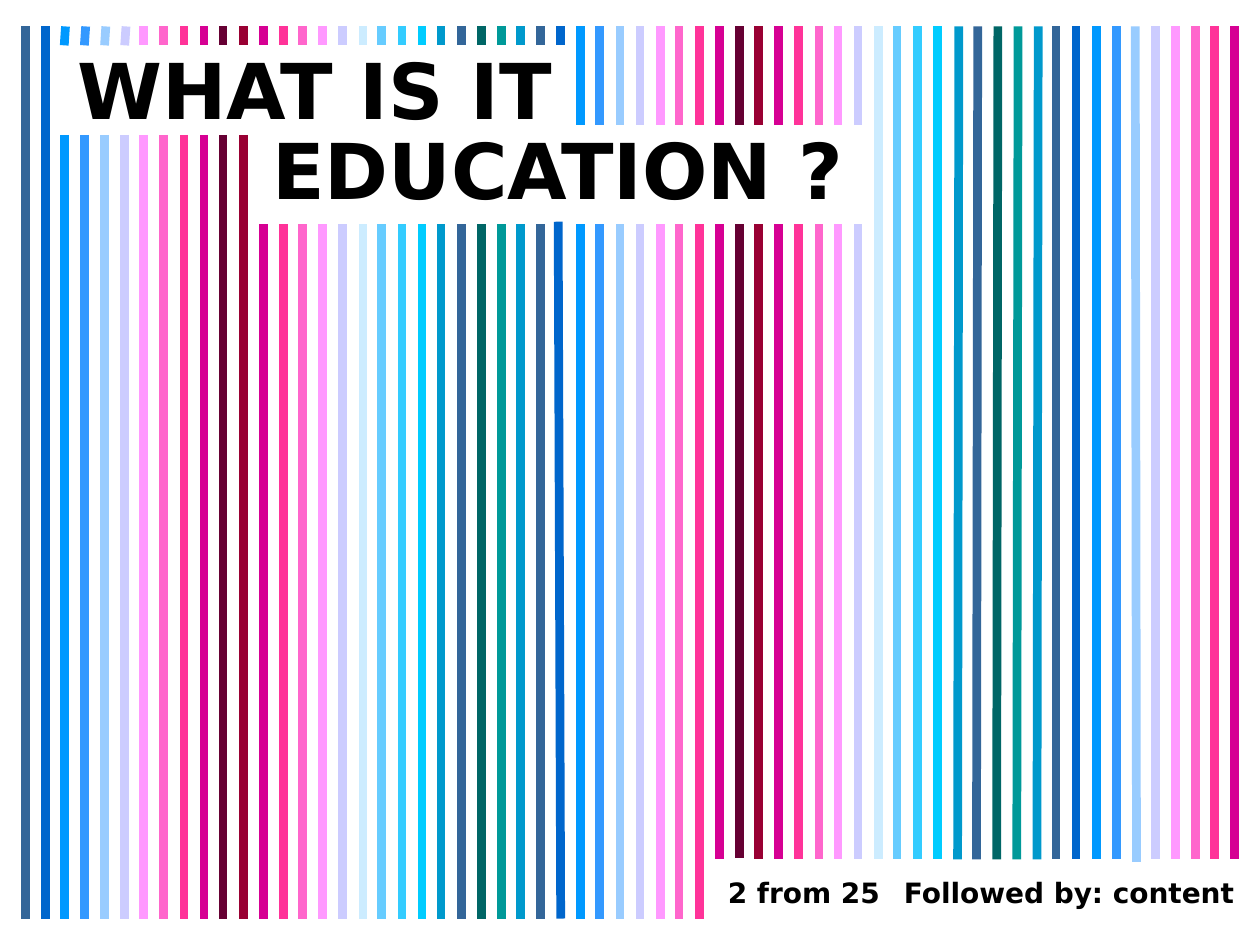
from lxml import etree
from pptx import Presentation
from pptx import util as u
from pptx.dml.color import RGBColor
from pptx.enum import shapes, text
from pptx.oxml.ns import qn

PX = 9144  # EMU per px, 100 px to the inch
COLOURS = {
    "steel": "336699", "royal": "0066CC", "azure": "0099FF", "sky": "3399FF",
    "pale": "99CCFF", "lilac": "CCCCFF", "pink": "FF99FF", "rose": "FF66CC",
    "hot": "FF3399", "magenta": "D60093", "plum": "660033", "wine": "990033",
    "ice": "CCECFF", "light": "66CCFF", "bright": "33CCFF", "cyan": "00CCFF",
    "ocean": "0099CC", "pine": "006666", "teal": "009999",
    "ink": "000000", "outline": "054697",
}
# The stripes run through this sequence again and again
CYCLE = ("steel royal azure sky pale lilac pink rose hot magenta plum wine magenta "
         "hot rose pink lilac ice light bright cyan ocean steel pine teal ocean").split()
STRIPES = 62
LEFT, RIGHT, TOP, BOTTOM = 20, 980, 21, 729

prs = Presentation()
prs.slide_width, prs.slide_height = 1000 * PX, 750 * PX
slide = prs.slides.add_slide(prs.slide_layouts[5])


def add_stripe(i, top, bottom, top_shift=0, bottom_shift=0):
    x = round(LEFT + i * (RIGHT - LEFT) / (STRIPES - 1))
    stripe = slide.shapes.add_connector(
        shapes.MSO_CONNECTOR.STRAIGHT,
        (x + top_shift) * PX, top * PX, (x + bottom_shift) * PX, bottom * PX)
    stripe.line.color.rgb = RGBColor.from_string(COLOURS[CYCLE[i % len(CYCLE)]])
    stripe.line.width = u.Pt(5)
    etree.SubElement(stripe._element.spPr, qn("a:effectLst"))


def write_label(label, wording, size, left, top, width, height):
    label.left, label.top, label.width, label.height = (
        n * PX for n in (left, top, width, height))
    frame = label.text_frame
    frame.text = wording
    frame.word_wrap = True
    frame.auto_size = text.MSO_AUTO_SIZE.SHAPE_TO_FIT_TEXT
    frame.vertical_anchor = text.MSO_ANCHOR.TOP
    paragraph = frame.paragraphs[0]
    paragraph.alignment = text.PP_ALIGN.CENTER
    run = paragraph.runs[0]
    run.font.size, run.font.bold, run.font.name = u.Pt(size), True, "DejaVu Sans"
    run.font.color.rgb = RGBColor.from_string(COLOURS["ink"])
    # Thin letter outline, which has to come first in the run properties
    outline = etree.Element(qn("a:ln"), w=str(u.Pt(1)))
    fill = etree.SubElement(outline, qn("a:solidFill"))
    etree.SubElement(fill, qn("a:srgbClr"), val=COLOURS["outline"])
    run.font._element.insert(0, outline)


# Long stripes, starting below the title lines and ending above the footer
top_shifts = {27: -2, **dict.fromkeys(range(47, 52), 1)}
for i in range(STRIPES):
    if 2 <= i < 12:
        top = 107
    elif 12 <= i < 43:
        top = 176 if i == 27 else 178
    else:
        top = TOP
    bottom = BOTTOM if i < 35 else {36: 681, 56: 684}.get(i, 682)
    add_stripe(i, top, bottom, top_shifts.get(i, 0), 1 if i == 56 else 0)

# Title in two staggered lines
write_label(slide.shapes.title, "WHAT IS IT", 44, 0, 29, 500, 84)
write_label(slide.shapes.add_textbox(0, 0, 0, 0), "EDUCATION ?", 44, 193, 92, 500, 84)

# Short stripes above the title lines
for i in range(2, 43):
    add_stripe(i, TOP, 36 if i < 28 else 99, 1 if i < 6 else 0)

# Footer
write_label(slide.shapes.add_textbox(0, 0, 0, 0), "2 from 25", 16, 563, 690, 150, 37)
write_label(slide.shapes.add_textbox(0, 0, 0, 0), "Followed by: content", 16,
            697, 690, 303, 37)

prs.save("out.pptx")
